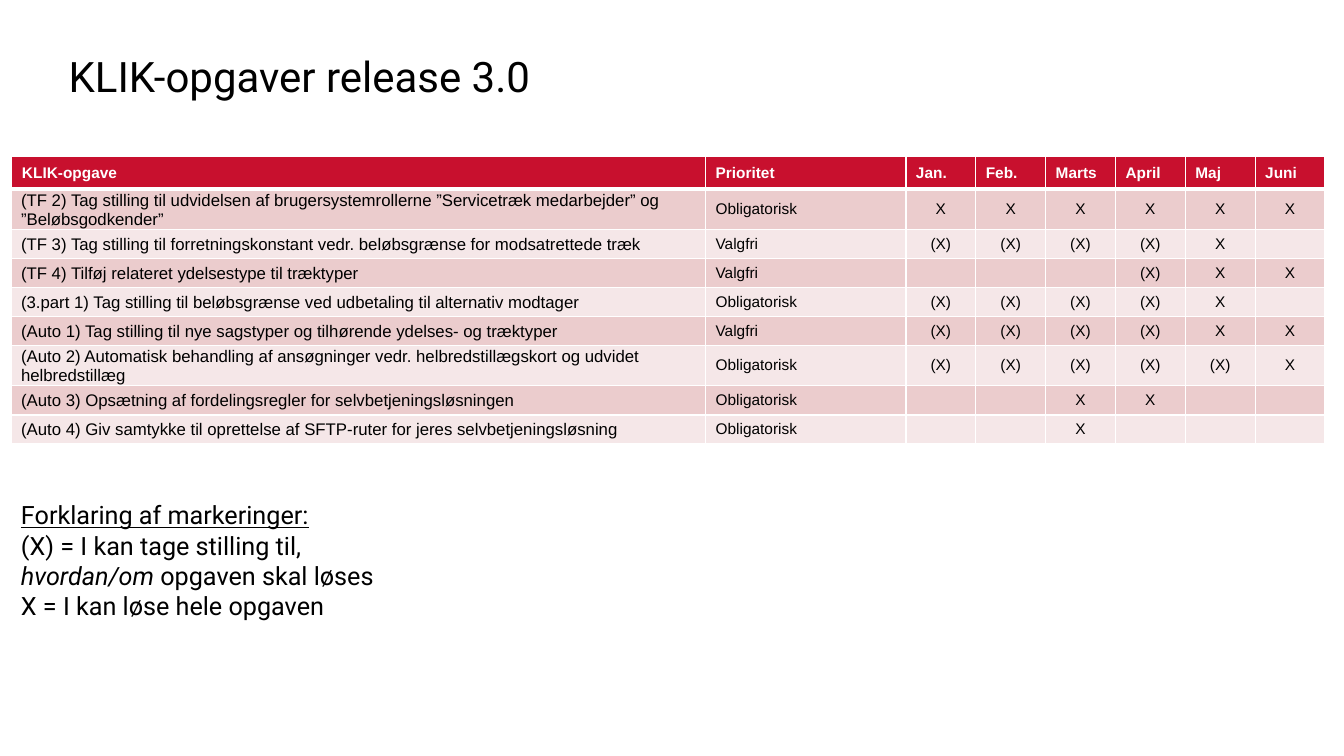
import dataclasses
from typing import Any

import lxml.etree
import pptx
import pptx.dml.color
import pptx.enum.text
import pptx.oxml.ns
import pptx.util

Cm = pptx.util.Cm
Pt = pptx.util.Pt
qn = pptx.oxml.ns.qn
ALIGN = pptx.enum.text.PP_ALIGN
ANCHOR = pptx.enum.text.MSO_ANCHOR
AUTO_SIZE = pptx.enum.text.MSO_AUTO_SIZE

COLORS = {
    "text": "000000",
    "white": "FFFFFF",
    "header": "C8102E",
    "odd": "EBCCCD",
    "even": "F5E7E8",
}
TITLE_FONT = {"name": "Roboto", "size": Pt(30)}
NOTE_FONT = {"name": "Roboto", "size": Pt(18)}
HEADER_FONT = {"name": "Arial", "size": Pt(11), "bold": True}
TASK_FONT = {"name": "Arial", "size": Pt(12), "bold": False}
CELL_FONT = {"name": "Arial", "size": Pt(11), "bold": False}
NO_MARGINS = {f"margin_{side}": 0 for side in ("left", "top", "right", "bottom")}
TASK_MARGINS = {f"margin_{side}": Cm(0.03) for side in ("left", "top", "right")} | {"margin_bottom": 0}

MONTHS = ["Jan.", "Feb.", "Marts", "April", "Maj", "Juni"]
COLUMN_WIDTHS = [17.48, 5.05] + [1.76] * len(MONTHS)
HEADER_HEIGHT = 0.81


@dataclasses.dataclass(frozen=True)
class Task:
    name: str
    priority: str
    marks: tuple[str, ...]
    height: float = 0.72


SOME, FULL, NONE = "(X)", "X", ""
TASKS = [
    Task("(TF 2) Tag stilling til udvidelsen af brugersystemrollerne ”Servicetræk medarbejder” og "
         "”Beløbsgodkender”", "Obligatorisk", (FULL,) * 6, 1.02),
    Task("(TF 3) Tag stilling til forretningskonstant vedr. beløbsgrænse for modsatrettede træk",
         "Valgfri", (SOME,) * 4 + (FULL, NONE)),
    Task("(TF 4) Tilføj relateret ydelsestype til træktyper",
         "Valgfri", (NONE,) * 3 + (SOME, FULL, FULL)),
    Task("(3.part 1) Tag stilling til beløbsgrænse ved udbetaling til alternativ modtager",
         "Obligatorisk", (SOME,) * 4 + (FULL, NONE)),
    Task("(Auto 1) Tag stilling til nye sagstyper og tilhørende ydelses- og træktyper",
         "Valgfri", (SOME,) * 4 + (FULL, FULL)),
    Task("(Auto 2) Automatisk behandling af ansøgninger vedr. helbredstillægskort og udvidet "
         "helbredstillæg", "Obligatorisk", (SOME,) * 5 + (FULL,), 1.02),
    Task("(Auto 3) Opsætning af fordelingsregler for selvbetjeningsløsningen",
         "Obligatorisk", (NONE, NONE, FULL, FULL, NONE, NONE)),
    Task("(Auto 4) Giv samtykke til oprettelse af SFTP-ruter for jeres selvbetjeningsløsning",
         "Obligatorisk", (NONE, NONE, FULL, NONE, NONE, NONE)),
]
NOTES = [
    [("Forklaring af markeringer:", {"underline": True})],
    [("(X) = I kan tage stilling til, ", {}), ("hvordan/om", {"italic": True}),
     (" opgaven skal løses", {})],
    [("X = I kan løse hele opgaven", {})],
]


def rgb(color: str) -> pptx.dml.color.RGBColor:
    return pptx.dml.color.RGBColor.from_string(COLORS[color])


def set_all(target: Any, values: dict[str, Any]) -> None:
    for name, value in values.items():
        setattr(target, name, value)


def add_run(p: Any, text: str, font: dict[str, Any], color: str = "text") -> None:
    r = p.add_run()
    r.text = text
    set_all(r.font, font)
    r.font.color.rgb = rgb(color)


def add_borders(cell: Any, widths: dict[str, float]) -> None:
    tc_pr = cell._tc.get_or_add_tcPr()
    for side, width in widths.items():
        ln = lxml.etree.SubElement(tc_pr, qn(f"a:ln{side}"), w=str(Pt(width)))
        fill = lxml.etree.SubElement(ln, qn("a:solidFill"))
        lxml.etree.SubElement(fill, qn("a:srgbClr"), val=COLORS["white"])


def fill_cell(cell: Any, text: str, font: dict[str, Any], row: int, column: int) -> None:
    add_borders(cell, {"L": 1, "R": 1, "T": 3 if row == 1 else 1, "B": 3 if row == 0 else 1})
    cell.fill.solid()
    cell.fill.fore_color.rgb = rgb("header" if row == 0 else "odd" if row % 2 else "even")
    cell.vertical_anchor = ANCHOR.MIDDLE
    p = cell.text_frame.paragraphs[0]
    if row and column == 0:
        set_all(cell, TASK_MARGINS)
        p._p.get_or_add_pPr().set("marL", str(Cm(0.2)))
    elif row and column > 1:
        p.alignment = ALIGN.CENTER
    if text:
        add_run(p, text, font, "text" if row else "white")
    else:
        # An empty cell needs a small text size too, or its row grows.
        lxml.etree.SubElement(p._p, qn("a:endParaRPr"), sz=str(int(font["size"].pt * 100)))


def add_title(s: Any) -> None:
    sp = s.shapes.title
    set_all(sp, {"left": Cm(1.73), "top": Cm(1.6), "width": Cm(30.28), "height": Cm(2.34)})
    tf = sp.text_frame
    set_all(tf, NO_MARGINS | {"vertical_anchor": ANCHOR.TOP, "auto_size": AUTO_SIZE.NONE})
    p = tf.paragraphs[0]
    set_all(p, {"alignment": ALIGN.LEFT, "line_spacing": Pt(27)})
    add_run(p, "KLIK-opgaver release 3.0", TITLE_FONT)


def add_task_table(s: Any) -> None:
    heights = [HEADER_HEIGHT] + [task.height for task in TASKS]
    rows = [["KLIK-opgave", "Prioritet", *MONTHS]]
    rows += [[task.name, task.priority, *task.marks] for task in TASKS]
    table = s.shapes.add_table(len(rows), len(COLUMN_WIDTHS), Cm(0.3), Cm(3.95),
                               Cm(sum(COLUMN_WIDTHS)), Cm(sum(heights))).table
    table.horz_banding = False
    for column, width in zip(table.columns, COLUMN_WIDTHS):
        column.width = Cm(width)
    for i, (texts, height) in enumerate(zip(rows, heights)):
        table.rows[i].height = Cm(height)
        for j, text in enumerate(texts):
            font = HEADER_FONT if i == 0 else TASK_FONT if j == 0 else CELL_FONT
            fill_cell(table.cell(i, j), text, font, i, j)


def add_notes_box(s: Any) -> None:
    tf = s.shapes.add_textbox(Cm(0.28), Cm(12.47), Cm(10.03), Cm(3.33)).text_frame
    set_all(tf, {"word_wrap": True, "auto_size": AUTO_SIZE.SHAPE_TO_FIT_TEXT})
    for i, runs in enumerate(NOTES):
        p = tf.add_paragraph() if i else tf.paragraphs[0]
        for text, emphasis in runs:
            add_run(p, text, NOTE_FONT | emphasis)


def main() -> None:
    prs = pptx.Presentation()
    set_all(prs, {"slide_width": Cm(33.87), "slide_height": Cm(19.05)})
    s = prs.slides.add_slide(prs.slide_layouts[5])
    add_title(s)
    add_task_table(s)
    add_notes_box(s)
    prs.save("out.pptx")


if __name__ == "__main__":
    main()
